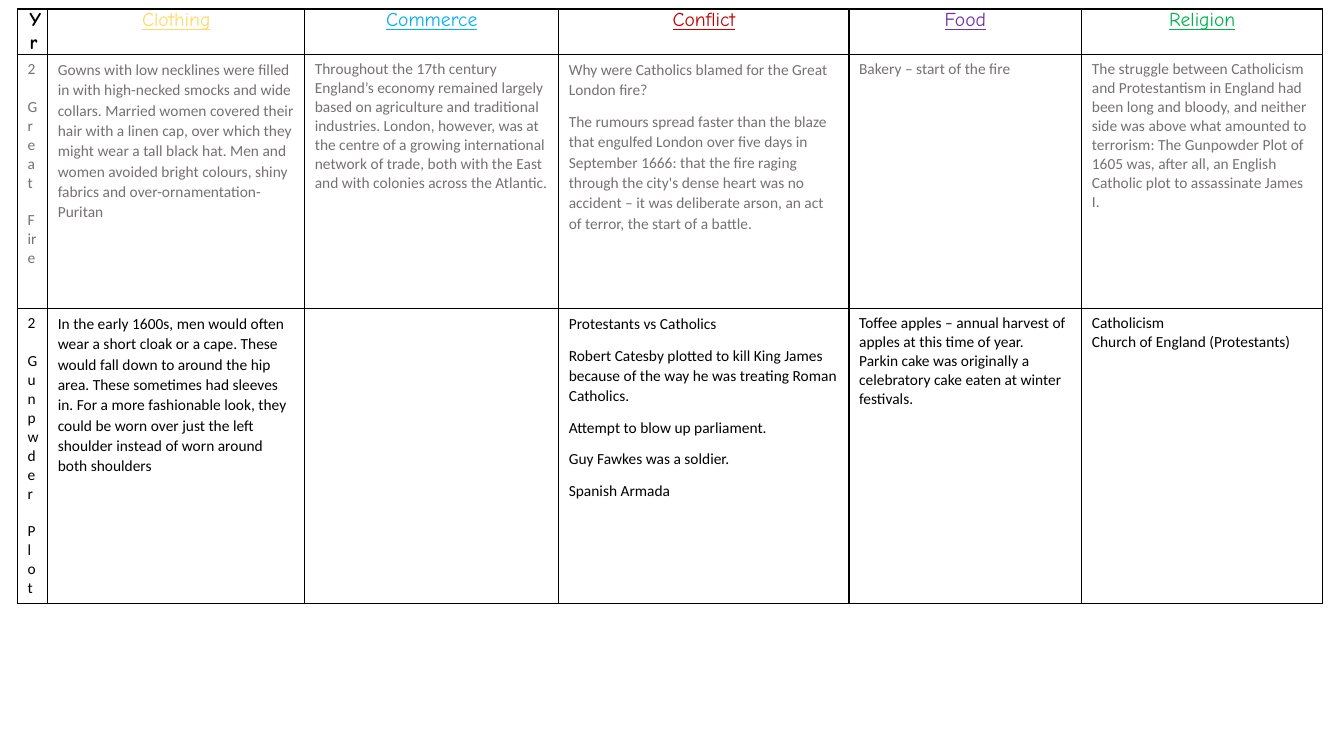
from lxml.etree import SubElement
from pptx import Presentation
from pptx.dml.color import RGBColor
from pptx.enum.text import PP_ALIGN as Align
from pptx.oxml.ns import qn
from pptx.util import Pt

COLORS = {"black": "000000", "grey": "767171", "yellow": "FFD966", "blue": "00B0F0",
          "red": "C00000", "purple": "7030A0", "green": "00B050"}

# Content: headings, then one row of cells per topic, each cell a list of paragraphs
HEADINGS = [("Yr", "black"), ("Clothing", "yellow"), ("Commerce", "blue"),
            ("Conflict", "red"), ("Food", "purple"), ("Religion", "green")]
TOPICS = [
    ("grey", [
        ["2", "Great", "Fire"],
        ["Gowns with low necklines were filled in with high-necked smocks and wide collars. "
         "Married women covered their hair with a linen cap, over which they might wear a tall "
         "black hat. Men and women avoided bright colours, shiny fabrics and "
         "over-ornamentation- Puritan"],
        ["Throughout the 17th century England’s economy remained largely based on agriculture "
         "and traditional industries. London, however, was at the centre of a growing "
         "international network of trade, both with the East and with colonies across the "
         "Atlantic."],
        ["Why were Catholics blamed for the Great London fire?",
         "The rumours spread faster than the blaze that engulfed London over five days in "
         "September 1666: that the fire raging through the city's dense heart was no accident "
         "– it was deliberate arson, an act of terror, the start of a battle."],
        ["Bakery – start of the fire"],
        ["The struggle between Catholicism and Protestantism in England had been long and "
         "bloody, and neither side was above what amounted to terrorism: The Gunpowder Plot of "
         "1605 was, after all, an English Catholic plot to assassinate James I."],
    ]),
    ("black", [
        ["2", "Gunpwder", "Plot"],
        ["In the early 1600s, men would often wear a short cloak or a cape. These would fall "
         "down to around the hip area. These sometimes had sleeves in. For a more fashionable "
         "look, they could be worn over just the left shoulder instead of worn around both "
         "shoulders"],
        [],
        ["Protestants vs Catholics",
         "Robert Catesby plotted to kill King James because of the way he was treating Roman "
         "Catholics.",
         "Attempt to blow up parliament.",
         "Guy Fawkes was a soldier.",
         "Spanish Armada"],
        ["Toffee apples – annual harvest of apples at this time of year.",
         "Parkin cake was originally a celebratory cake eaten at winter festivals."],
        ["Catholicism", "Church of England (Protestants)"],
    ]),
]

# Layout in points
LEFT, TOP = 12.5, 6.5
COLUMN_WIDTHS = [21.6, 183.6, 181.4, 207.4, 166.3, 172.1]
ROW_HEIGHTS = [32.4, 181.4, 211]
LINE_GAP = 13.4
SPACED_COLUMNS = {1, 3}


def write(cell, lines, color="black", font="Calibri", size=11, bold=False, underline=False,
          align=Align.LEFT, line_spacing=None, before=0, after=0):
    for index, line in enumerate(lines):
        frame = cell.text_frame
        paragraph = frame.add_paragraph() if index else frame.paragraphs[0]
        paragraph.alignment = align
        paragraph.line_spacing = line_spacing
        paragraph.space_before = Pt(before if index else 0)
        paragraph.space_after = Pt(after)
        run = paragraph.add_run()
        run.text = line
        run.font.name, run.font.size = font, Pt(size)
        run.font.bold, run.font.underline = bold, underline
        run.font.color.rgb = RGBColor.from_string(COLORS[color])


def add_borders(cell):
    properties = cell._tc.get_or_add_tcPr()
    for position, side in enumerate(("a:lnL", "a:lnR", "a:lnT", "a:lnB")):
        line = properties.makeelement(qn(side), {"w": str(Pt(1))})
        fill = SubElement(line, qn("a:solidFill"))
        SubElement(fill, qn("a:srgbClr"), val=COLORS["black"])
        properties.insert(position, line)


presentation = Presentation()
presentation.slide_width, presentation.slide_height = Pt(960), Pt(540)
slide = presentation.slides.add_slide(presentation.slide_layouts[6])

# Table grid
table = slide.shapes.add_table(
    len(ROW_HEIGHTS), len(COLUMN_WIDTHS), Pt(LEFT), Pt(TOP),
    Pt(sum(COLUMN_WIDTHS)), Pt(sum(ROW_HEIGHTS))).table
table.first_row = table.horz_banding = False
for column, width in zip(table.columns, COLUMN_WIDTHS):
    column.width = Pt(width)
for row, height in zip(table.rows, ROW_HEIGHTS):
    row.height = Pt(height)
for cell in table.iter_cells():
    cell.fill.background()
    add_borders(cell)

# Heading row
for index, (heading, color) in enumerate(HEADINGS):
    cell = table.cell(0, index)
    cell.margin_left = cell.margin_right = Pt(8.6)
    cell.margin_top = cell.margin_bottom = 0
    write(cell, [heading], color=color, font="Comic Neue", size=14, bold=index == 0,
          underline=index > 0, align=Align.CENTER)

# Topic rows
for row_index, (color, cells) in enumerate(TOPICS, start=1):
    for index, lines in enumerate(cells):
        spaced = index in SPACED_COLUMNS
        write(table.cell(row_index, index), lines, color=color,
              line_spacing=1.07 if spaced else None, after=8 if spaced else 0,
              before=LINE_GAP if index == 0 else 0)

presentation.save("out.pptx")
